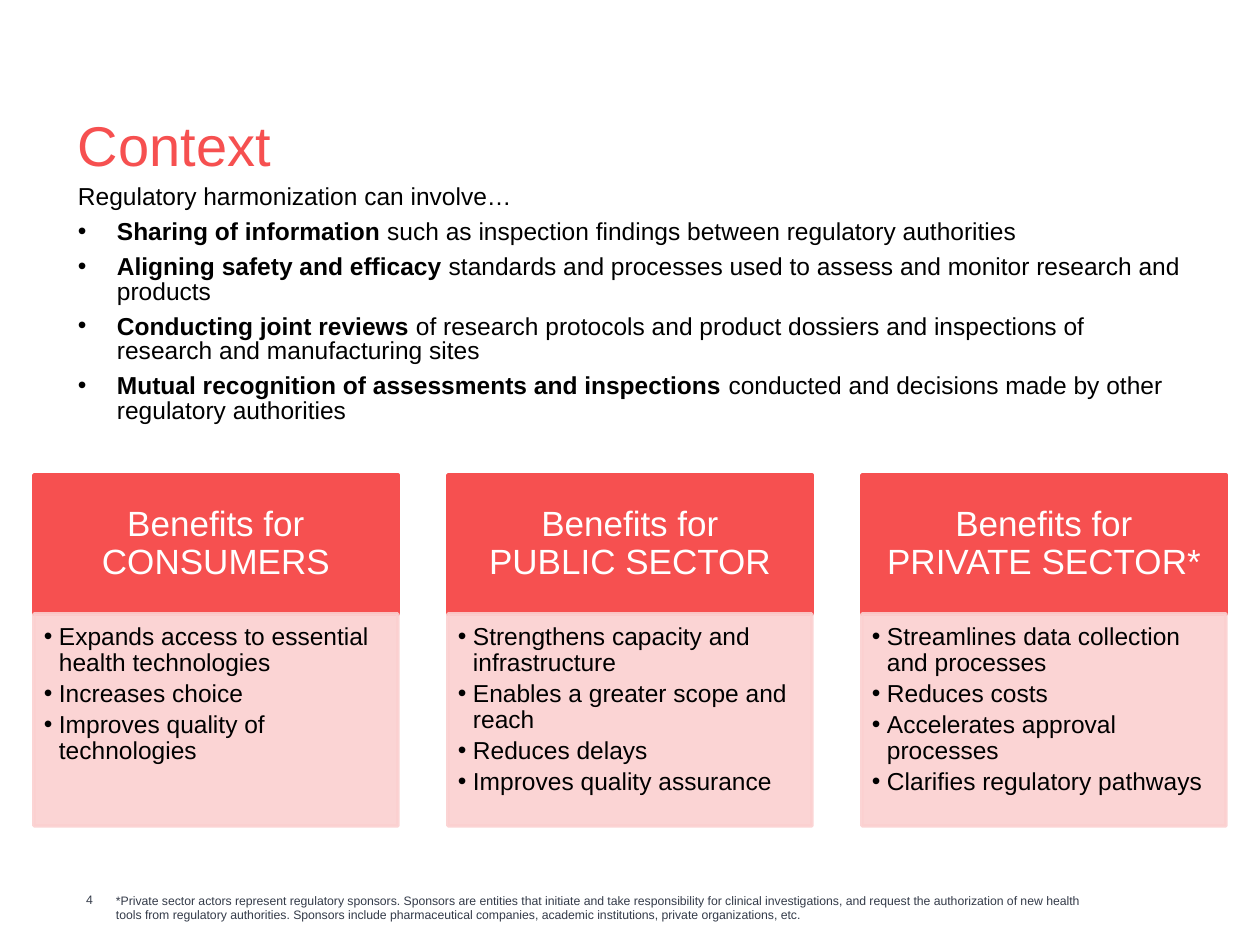
from dataclasses import dataclass

from lxml.etree import SubElement
from pptx import Presentation
from pptx.dml.color import RGBColor
from pptx.enum.shapes import MSO_SHAPE
from pptx.enum.text import MSO_ANCHOR, MSO_AUTO_SIZE, PP_ALIGN
from pptx.oxml.ns import qn
from pptx.util import Emu, Pt

PX_PER_INCH = 126
SLIDE_WIDTH, SLIDE_HEIGHT = 1260, 945
CORAL = RGBColor(0xF6, 0x50, 0x50)
BLUSH = RGBColor(0xFB, 0xD0, 0xD0)
SLATE = RGBColor(0x34, 0x3B, 0x49)
BLACK = RGBColor(0x00, 0x00, 0x00)
WHITE = RGBColor(0xFF, 0xFF, 0xFF)
FONT = "Arial"

COLUMN_MARGIN, COLUMN_WIDTH = 34, 364
HEADING_TOP, HEADING_HEIGHT, BENEFITS_HEIGHT = 475, 139, 212


@dataclass(frozen=True)
class Box:
    left: int
    top: int
    width: int
    height: int


@dataclass(frozen=True)
class Activity:
    lead: str
    detail: str


@dataclass(frozen=True)
class Column:
    audience: str
    benefits: tuple[str, ...]


ACTIVITIES = (
    Activity("Sharing of information ",
             "such as inspection findings between regulatory authorities"),
    Activity("Aligning safety and efficacy ",
             "standards and processes used to assess and monitor research and products"),
    Activity("Conducting joint reviews ",
             "of research protocols and product dossiers and inspections of "
             "research and manufacturing sites"),
    Activity("Mutual recognition of assessments and inspections ",
             "conducted and decisions made by other regulatory authorities"),
)
COLUMNS = (
    Column("CONSUMERS", (
        "Expands access to essential health technologies",
        "Increases choice",
        "Improves quality of technologies")),
    Column("PUBLIC SECTOR", (
        "Strengthens capacity and infrastructure",
        "Enables a greater scope and reach",
        "Reduces delays",
        "Improves quality assurance")),
    Column("PRIVATE SECTOR*", (
        "Streamlines data collection and processes",
        "Reduces costs",
        "Accelerates approval processes",
        "Clarifies regulatory pathways")),
)
FOOTNOTE = (
    "*Private sector actors represent regulatory sponsors. Sponsors are entities that "
    "initiate and take responsibility for clinical investigations, and request the "
    "authorization of new health tools from regulatory authorities. Sponsors include "
    "pharmaceutical companies, academic institutions, private organizations, etc."
)


def px(length: int) -> Emu:
    return Emu(round(length * 914400 / PX_PER_INCH))


def place(box: Box) -> tuple[Emu, Emu, Emu, Emu]:
    return px(box.left), px(box.top), px(box.width), px(box.height)


def set_frame(frame, insets: tuple[int, int, int, int], anchor=MSO_ANCHOR.TOP) -> None:
    """Insets run left, top, right, bottom."""
    frame.word_wrap = True
    frame.auto_size = MSO_AUTO_SIZE.NONE
    frame.vertical_anchor = anchor
    (frame.margin_left, frame.margin_top,
     frame.margin_right, frame.margin_bottom) = map(px, insets)


def style(paragraph, size: int, color: RGBColor, align=PP_ALIGN.LEFT,
          line_spacing=None, space_after=None) -> None:
    paragraph.alignment = align
    paragraph.line_spacing = line_spacing
    paragraph.space_after = space_after
    for run in paragraph.runs:
        run.font.name = FONT
        run.font.size = Pt(size)
        run.font.color.rgb = color


def add_bullet(paragraph, indent: int) -> None:
    properties = paragraph._p.get_or_add_pPr()
    properties.set("marL", str(px(indent)))
    properties.set("indent", str(-px(indent)))
    SubElement(properties, qn("a:buFont")).set("typeface", FONT)
    SubElement(properties, qn("a:buChar")).set("char", "•")


def add_panel(slide, box: Box, color: RGBColor, opacity: int = 100):
    panel = slide.shapes.add_shape(MSO_SHAPE.RECTANGLE, *place(box))
    panel.shadow.inherit = False
    panel.fill.solid()
    panel.fill.fore_color.rgb = color
    panel.line.color.rgb = color
    panel.line.width = Pt(2)
    if opacity < 100:
        for tint in panel._element.spPr.iter(qn("a:srgbClr")):
            SubElement(tint, qn("a:alpha")).set("val", str(opacity * 1000))
    return panel


def add_column(slide, left: int, column: Column) -> None:
    heading_box = Box(left, HEADING_TOP, COLUMN_WIDTH, HEADING_HEIGHT)
    heading = add_panel(slide, heading_box, CORAL).text_frame
    set_frame(heading, (20, 11, 20, 11), MSO_ANCHOR.MIDDLE)
    heading.text = f"Benefits for\v{column.audience}"
    style(heading.paragraphs[0], 20, WHITE, PP_ALIGN.CENTER, 0.9)

    benefits_box = Box(left, HEADING_TOP + HEADING_HEIGHT, COLUMN_WIDTH, BENEFITS_HEIGHT)
    benefits = add_panel(slide, benefits_box, BLUSH, opacity=90).text_frame
    set_frame(benefits, (10, 10, 14, 15))
    benefits.text = "\n".join(column.benefits)
    for paragraph in benefits.paragraphs:
        add_bullet(paragraph, 15)
        style(paragraph, 14, BLACK, line_spacing=0.9, space_after=Pt(2.5))


def add_label(slide, box: Box, text: str, insets: tuple[int, int, int, int],
              anchor=MSO_ANCHOR.TOP, align=PP_ALIGN.LEFT) -> None:
    label = slide.shapes.add_textbox(*place(box)).text_frame
    set_frame(label, insets, anchor)
    label.text = text
    style(label.paragraphs[0], 7, SLATE, align)


def set_title(slide, box: Box, text: str) -> None:
    title = slide.shapes.title
    title.left, title.top, title.width, title.height = place(box)
    set_frame(title.text_frame, (0, 0, 0, 0))
    title.text_frame.text = text
    style(title.text_frame.paragraphs[0], 32, CORAL, line_spacing=Pt(40))


def add_activities(slide, box: Box) -> None:
    frame = slide.shapes.add_textbox(*place(box)).text_frame
    set_frame(frame, (0, 0, 0, 0))
    frame.text = "Regulatory harmonization can involve…"
    for activity in ACTIVITIES:
        paragraph = frame.add_paragraph()
        add_bullet(paragraph, 39)
        lead = paragraph.add_run()
        lead.text = activity.lead
        lead.font.bold = True
        paragraph.add_run().text = activity.detail
    for paragraph in frame.paragraphs:
        style(paragraph, 14, BLACK, line_spacing=Pt(14), space_after=Pt(6))


def main() -> None:
    presentation = Presentation()
    presentation.slide_width = px(SLIDE_WIDTH)
    presentation.slide_height = px(SLIDE_HEIGHT)
    slide = presentation.slides.add_slide(presentation.slide_layouts[5])

    set_title(slide, Box(78, 108, 1108, 66), "Context")
    add_activities(slide, Box(78, 186, 1108, 241))

    pitch = (SLIDE_WIDTH - 2 * COLUMN_MARGIN - COLUMN_WIDTH) // (len(COLUMNS) - 1)
    for index, column in enumerate(COLUMNS):
        add_column(slide, COLUMN_MARGIN + index * pitch, column)

    add_label(slide, Box(35, 882, 58, 25), "4", (0, 0, 0, 0),
              MSO_ANCHOR.BOTTOM, PP_ALIGN.RIGHT)
    add_label(slide, Box(103, 887, 995, 23), FOOTNOTE, (13, 6, 13, 6))
    presentation.save("out.pptx")


if __name__ == "__main__":
    main()
